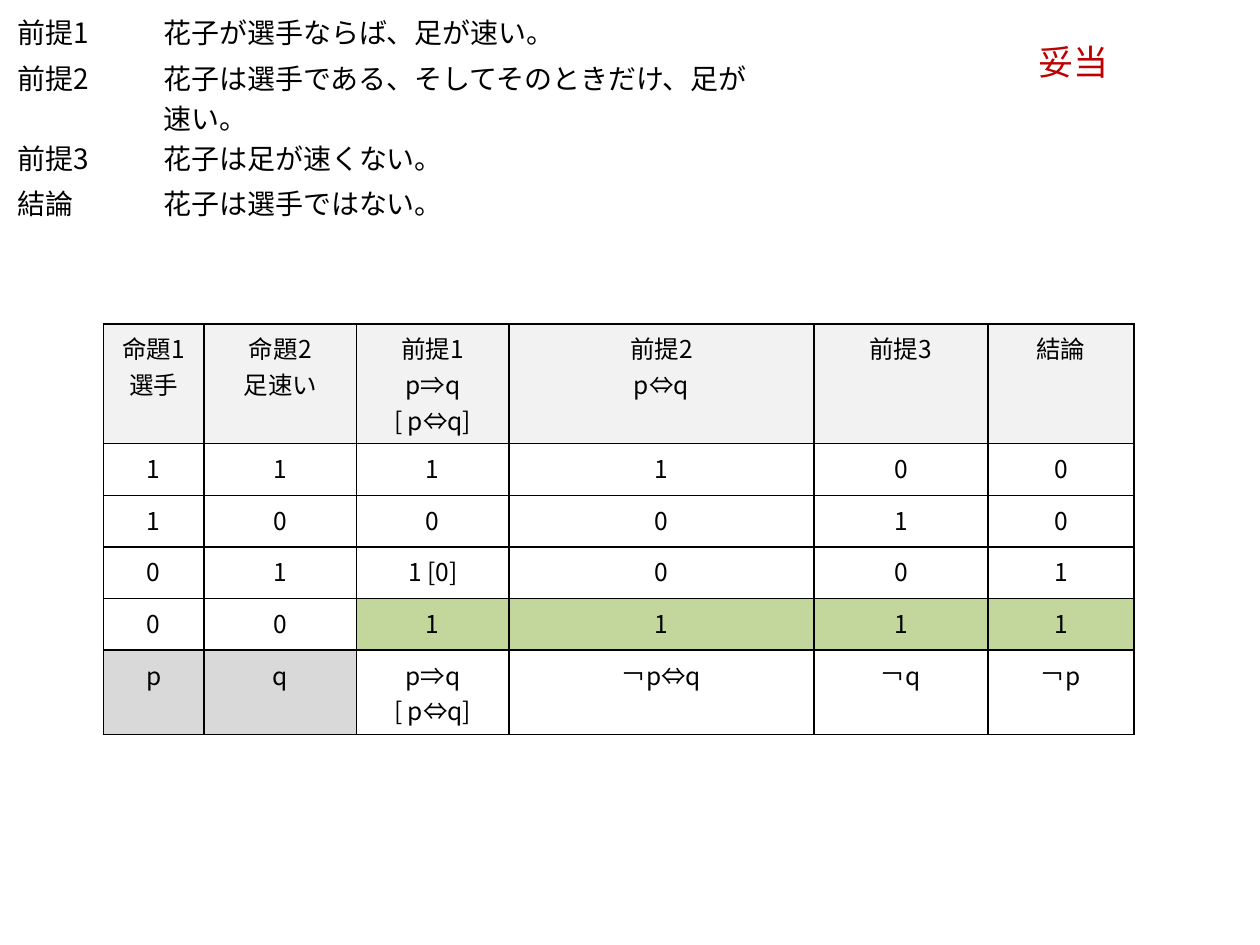
from lxml import etree
from pptx import Presentation
from pptx.dml.color import RGBColor
from pptx.enum.text import PP_ALIGN
from pptx.oxml.ns import qn
from pptx.util import Inches, Pt

LEFT, CENTER = PP_ALIGN.LEFT, PP_ALIGN.CENTER
FONT = "Noto Sans CJK JP"
BLACK = RGBColor(0x00, 0x00, 0x00)
RED = RGBColor(0xC0, 0x00, 0x00)
HEADER_GRAY = RGBColor(0xF2, 0xF2, 0xF2)
VARIABLE_GRAY = RGBColor(0xD9, 0xD9, 0xD9)
GREEN = RGBColor(0xC3, 0xD6, 0x9B)


def write_text(frame, text, size=14, color=BLACK, alignment=LEFT):
    frame.text = text
    for paragraph in frame.paragraphs:
        paragraph.alignment = alignment
        for run in paragraph.runs:
            run.font.name = FONT
            run.font.size = Pt(size)
            run.font.color.rgb = color
            east_asian = etree.SubElement(run.font._element, qn("a:ea"))
            east_asian.set("typeface", FONT)


def add_plain_table(slide, left, top, widths, heights):
    shape = slide.shapes.add_table(
        len(heights), len(widths), Inches(left), Inches(top),
        Inches(sum(widths)), Inches(sum(heights)))
    table = shape.table
    table.first_row = False
    table.horz_banding = False
    for column, width in zip(table.columns, widths):
        column.width = Inches(width)
    for row, height in zip(table.rows, heights):
        row.height = Inches(height)
    for cell in table.iter_cells():
        cell.fill.background()
    return table


presentation = Presentation()
presentation.slide_width = Inches(10)
presentation.slide_height = Inches(7.5)
slide = presentation.slides.add_slide(presentation.slide_layouts[6])

truth_rows = [
    ["命題1\n選手", "命題2\n足速い", "前提1\np⇒q\n[ p⇔q]", "前提2\np⇔q", "前提3", "結論"],
    ["1", "1", "1", "1", "0", "0"],
    ["1", "0", "0", "0", "1", "0"],
    ["0", "1", "1 [0]", "0", "0", "1"],
    ["0", "0", "1", "1", "1", "1"],
    ["p", "q", "p⇒q\n[ p⇔q]", "￢p⇔q", "￢q", "￢p"],
]
truth_table = add_plain_table(
    slide, 0.82, 2.57, [0.8, 1.21, 1.21, 2.42, 1.38, 1.16],
    [0.95, 0.41, 0.41, 0.41, 0.41, 0.67])
fills = {(0, column): HEADER_GRAY for column in range(6)}
fills.update({(4, column): GREEN for column in range(2, 6)})
fills.update({(5, column): VARIABLE_GRAY for column in range(2)})

for row_index, values in enumerate(truth_rows):
    for column_index, value in enumerate(values):
        cell = truth_table.cell(row_index, column_index)
        write_text(cell.text_frame, value, alignment=CENTER)
        properties = cell._tc.get_or_add_tcPr()
        for position, side in enumerate(("lnL", "lnR", "lnT", "lnB")):
            border = etree.Element(qn(f"a:{side}"), w=str(Pt(1)))
            solid = etree.SubElement(border, qn("a:solidFill"))
            etree.SubElement(solid, qn("a:srgbClr"), val=str(BLACK))
            properties.insert(position, border)
        if (row_index, column_index) in fills:
            cell.fill.solid()
            cell.fill.fore_color.rgb = fills[row_index, column_index]

verdict = slide.shapes.add_textbox(Inches(8.14), Inches(0.27), Inches(0.76), Inches(0.44))
verdict.text_frame.word_wrap = False
write_text(verdict.text_frame, "妥当", size=20, color=RED)

argument_rows = [
    ("前提1", "花子が選手ならば、足が速い。"),
    ("前提2", "花子は選手である、そしてそのときだけ、足が速い。"),
    ("前提3", "花子は足が速くない。"),
    ("結論", "花子は選手ではない。"),
]
argument_table = add_plain_table(
    slide, 0.04, 0.04, [1.16, 4.98], [0.41, 0.64, 0.36, 0.36])
for row_index, values in enumerate(argument_rows):
    for column_index, value in enumerate(values):
        cell = argument_table.cell(row_index, column_index)
        cell.margin_top = Inches(0.05 if row_index == 0 else 0)
        cell.margin_bottom = 0
        write_text(cell.text_frame, value, size=16)

presentation.save("out.pptx")
